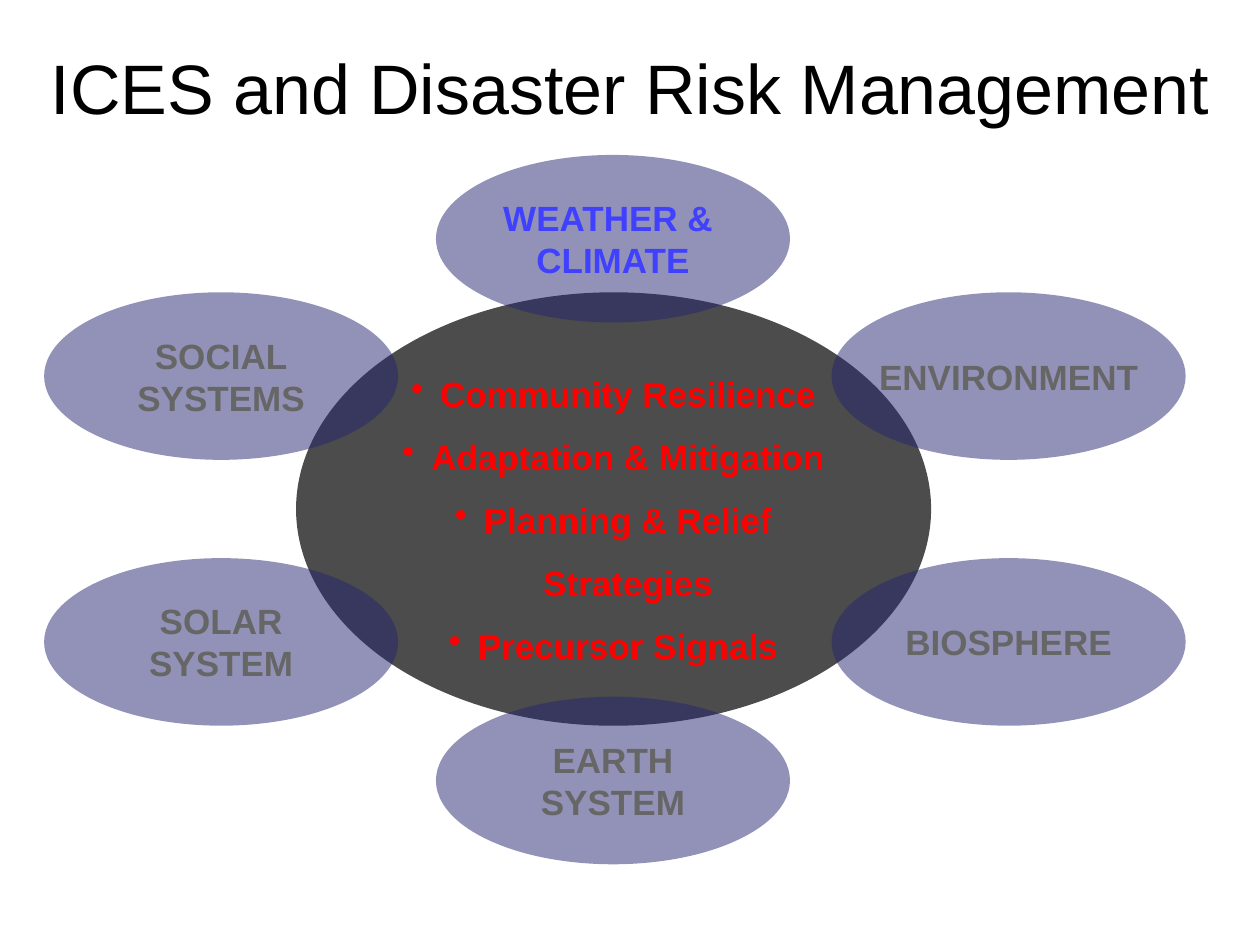
from dataclasses import dataclass
from lxml.etree import SubElement
from pptx import Presentation
from pptx.dml.color import RGBColor
from pptx.enum.shapes import MSO_SHAPE
from pptx.enum.text import MSO_ANCHOR, PP_ALIGN
from pptx.oxml.ns import qn
from pptx.util import Inches, Pt


@dataclass(frozen=True)
class Theme:
    font: str = "Arial"
    black: str = "000000"
    navy: str = "262673"
    red: str = "FF0000"
    gray: str = "666666"
    blue: str = "4040FF"
    title: int = 40
    body: int = 20


THEME = Theme()
COLS = (0.35, 3.46, 6.6)
ROWS = (1.23, 2.32, 4.43, 5.53)
SIZE = (2.81, 1.33)
HUB = (2.35, 2.32, 5.04, 3.44)
GOALS = (
    "Community Resilience",
    "Adaptation & Mitigation",
    "Planning & Relief Strategies",
    "Precursor Signals",
)
FIELDS = (
    (2, 1, "ENVIRONMENT", THEME.gray),
    (2, 2, "BIOSPHERE", THEME.gray),
    (1, 3, "EARTH\nSYSTEM", THEME.gray),
    (1, 0, "WEATHER & \nCLIMATE", THEME.blue),
    (0, 1, "SOCIAL\nSYSTEMS", THEME.gray),
    (0, 2, "SOLAR\nSYSTEM", THEME.gray),
)


def write(frame, text, size, color, bold=True):
    frame.vertical_anchor = MSO_ANCHOR.MIDDLE
    frame.text = text
    for para in frame.paragraphs:
        para.alignment = PP_ALIGN.CENTER
        font = para.font
        font.name, font.size, font.bold = THEME.font, Pt(size), bold
        font.color.rgb = RGBColor.from_string(color)


def bullet(para):
    para.line_spacing = 1.5
    props = para._p.get_or_add_pPr()
    props.set("marL", str(Inches(0.23)))
    props.set("indent", str(-Inches(0.23)))
    mark = props.makeelement(qn("a:buChar"), {"char": "•"})
    props.insert_element_before(mark, "a:tabLst", "a:defRPr", "a:extLst")


def oval(slide, box, color, alpha):
    shape = slide.shapes.add_shape(MSO_SHAPE.OVAL, *map(Inches, box))
    shape.shadow.inherit = False
    shape.line.fill.background()
    shape.fill.solid()
    shape.fill.fore_color.rgb = RGBColor.from_string(color)
    tone = shape._element.spPr.find(f"{qn('a:solidFill')}/{qn('a:srgbClr')}")
    SubElement(tone, qn("a:alpha"), val=str(alpha * 1000))
    return shape.text_frame


def heading(slide, text):
    box = slide.shapes.add_textbox(0, Inches(0.3), Inches(10), Inches(0.77))
    box.text_frame.word_wrap = True
    write(box.text_frame, text, THEME.title, THEME.black, False)


def hub(slide):
    frame = oval(slide, HUB, THEME.black, 70)
    frame.word_wrap = True
    frame.margin_left = frame.margin_right = Inches(0.05)
    write(frame, "\n".join(GOALS), THEME.body, THEME.red)
    for para in frame.paragraphs:
        bullet(para)


def field(slide, col, row, text, color):
    frame = oval(slide, (COLS[col], ROWS[row], *SIZE), THEME.navy, 50)
    frame.word_wrap = False
    frame.margin_left = frame.margin_right = 0
    write(frame, text, THEME.body, color)


def main():
    deck = Presentation()
    deck.slide_width, deck.slide_height = Inches(10), Inches(7.5)
    slide = deck.slides.add_slide(deck.slide_layouts[6])
    heading(slide, "ICES and Disaster Risk Management")
    hub(slide)
    for item in FIELDS:
        field(slide, *item)
    deck.save("out.pptx")


if __name__ == "__main__":
    main()
